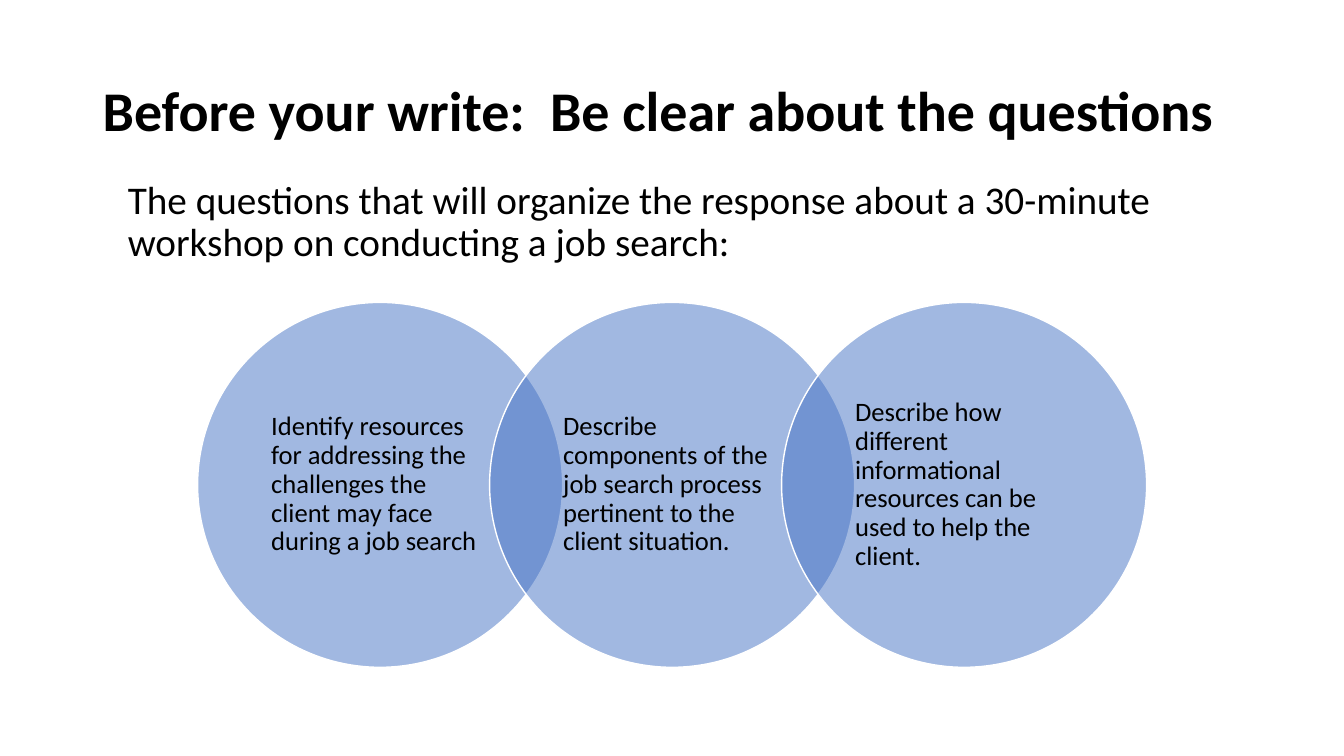
from pptx import Presentation
from pptx import util as u
from pptx.dml.color import RGBColor
from pptx.enum import shapes, text
from pptx.oxml.ns import qn
from lxml import etree

TITLE = "Before your write:  Be clear about the questions"
INTRO = "The questions that will organize the response about a 30-minute workshop on conducting a job search:"
QUESTIONS = [
    "Identify resources for addressing the challenges the client may face during a job search",
    "Describe components of the job search process pertinent to the client situation.",
    "Describe how different informational resources can be used to help the client. ",
]
THEME = {
    "font": "Calibri",
    "text": RGBColor.from_string("000000"),
    "circle": RGBColor.from_string("4472C4"),
    "outline": RGBColor.from_string("FFFFFF"),
    "alpha": "50000",
    "title_size": 40,
    "intro_size": 28,
    "question_size": 19,
}
LEFT, TOP, DIAMETER = 1.96, 3, 3.62
STEP = DIAMETER * 0.8
LABEL_INSET = 0.53
LABEL_SIDE = DIAMETER - 2 * LABEL_INSET


def add_text(parent, box, content, size, bold=False, anchor=text.MSO_ANCHOR.MIDDLE, margins=(0.1, 0.05)):
    sp = parent.add_textbox(*map(u.Inches, box))
    tf = sp.text_frame
    tf.word_wrap = True
    tf.vertical_anchor = anchor
    tf.margin_left = tf.margin_right = u.Inches(margins[0])
    tf.margin_top = tf.margin_bottom = u.Inches(margins[1])
    p = tf.paragraphs[0]
    p.line_spacing = 0.9
    r = p.add_run()
    r.text = content
    r.font.name = THEME["font"]
    r.font.size = u.Pt(size)
    r.font.bold = bold
    r.font.color.rgb = THEME["text"]


def add_circle(parent, left):
    sp = parent.add_shape(shapes.MSO_SHAPE.OVAL, *map(u.Inches, (left, TOP, DIAMETER, DIAMETER)))
    sp.shadow.inherit = False
    sp.fill.solid()
    sp.fill.fore_color.rgb = THEME["circle"]
    color = sp.fill._xPr.find(qn("a:solidFill"))[0]
    etree.SubElement(color, qn("a:alpha"), val=THEME["alpha"])
    sp.line.color.rgb = THEME["outline"]
    sp.line.width = u.Pt(1)


def main():
    prs = Presentation()
    prs.slide_width, prs.slide_height = u.Inches(13.33), u.Inches(7.5)
    s = prs.slides.add_slide(prs.slide_layouts[6])
    add_text(s.shapes, (0.92, 0.4, 11.5, 1.45), TITLE, THEME["title_size"], bold=True)
    add_text(s.shapes, (1.17, 1.74, 11.5, 1.31), INTRO, THEME["intro_size"], anchor=text.MSO_ANCHOR.TOP)
    venn = s.shapes.add_group_shape().shapes
    for i, question in enumerate(QUESTIONS):
        left = LEFT + i * STEP
        add_circle(venn, left)
        label = (left + LABEL_INSET, TOP + LABEL_INSET, LABEL_SIDE, LABEL_SIDE)
        add_text(venn, label, question, THEME["question_size"], margins=(0.2, 0.03))
    prs.save("out.pptx")


if __name__ == "__main__":
    main()
